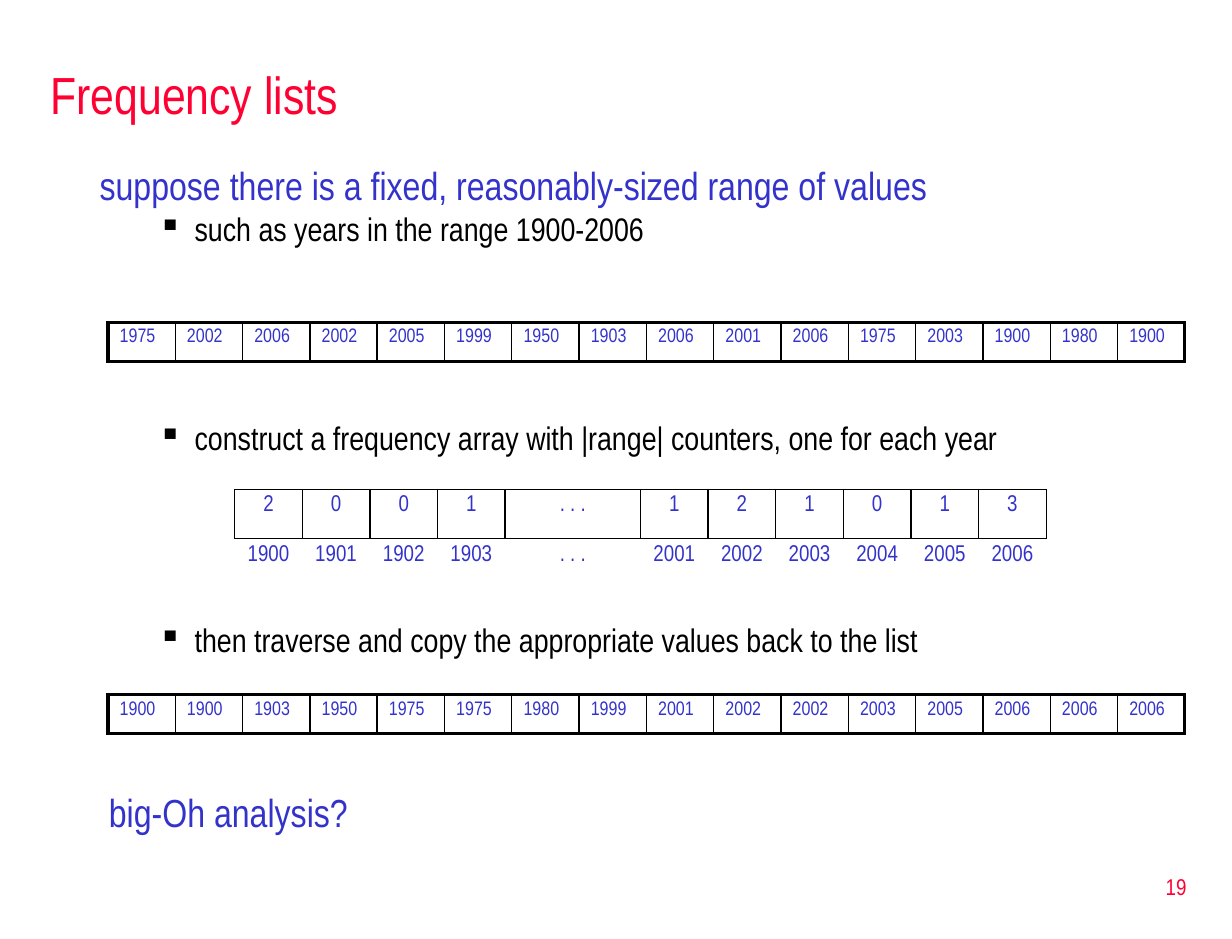
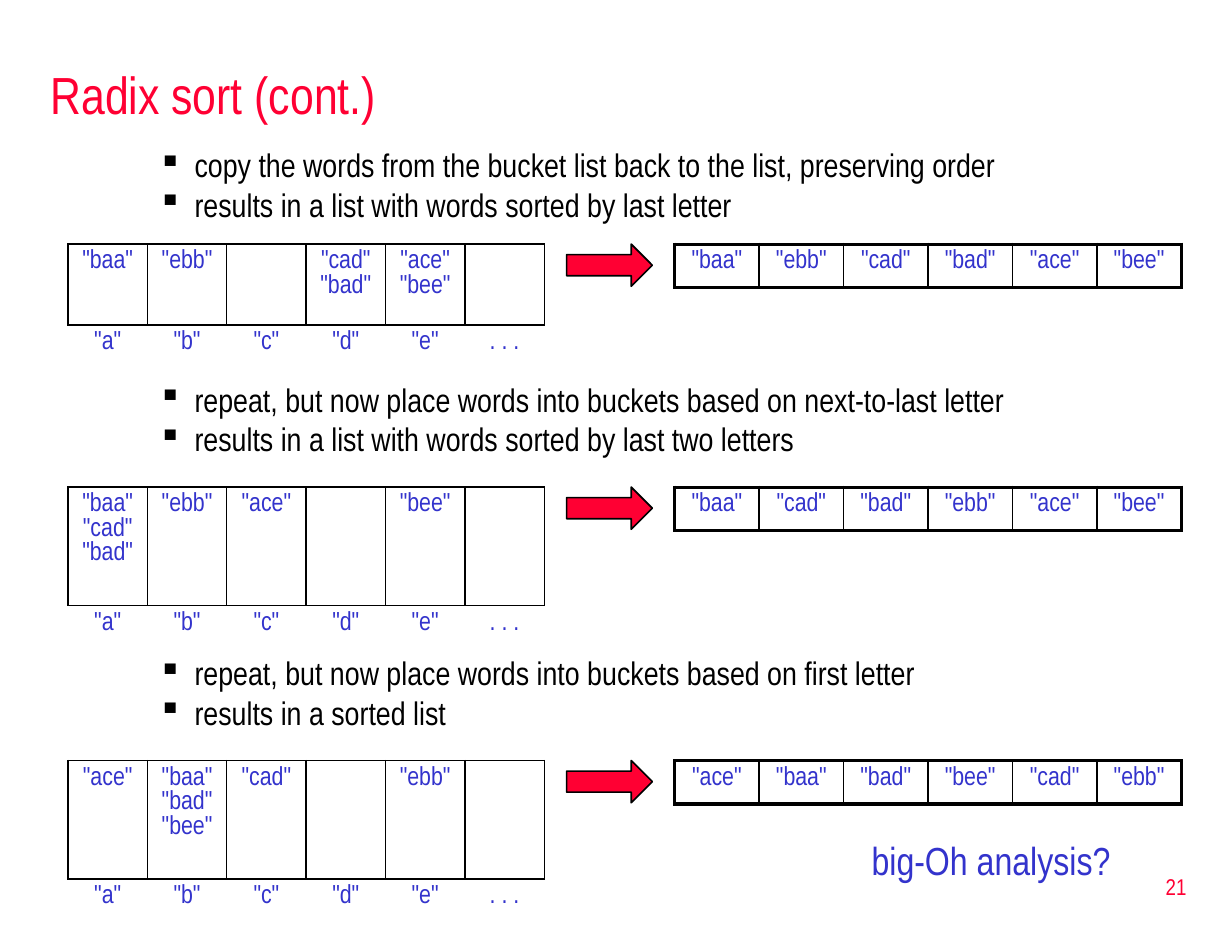
from dataclasses import dataclass

from lxml import etree
from pptx import Presentation
from pptx.dml.color import RGBColor
from pptx.enum.shapes import MSO_SHAPE
from pptx.enum.text import MSO_ANCHOR, MSO_AUTO_SIZE, PP_ALIGN as ALIGN
from pptx.oxml.ns import qn
from pptx.util import Inches, Pt


@dataclass(frozen=True)
class Theme:
    font: str = "Arial Narrow"
    red: str = "FF0033"
    blue: str = "3333CC"
    black: str = "000000"
    title: int = 32
    heading: int = 24
    bullet: int = 20
    word: int = 16
    small: int = 14
    year: int = 12
    thin: float = 1
    thick: float = 2.25


THEME = Theme()
COUNTS = ["2", "0", "0", "1", ". . .", "1", "2", "1", "0", "1", "3"]
COUNTED_YEARS = ["1900", "1901", "1902", "1903", ". . .",
                 "2001", "2002", "2003", "2004", "2005", "2006"]
YEARS = [1975, 2002, 2006, 2002, 2005, 1999, 1950, 1903,
         2006, 2001, 2006, 1975, 2003, 1900, 1980, 1900]
BUCKET_LABELS = ['"a"', '"b"', '"c"', '"d"', '"e"', ". . ."]

# Each pass: table top, bullets top, bucket height, bullets, buckets, resulting list
PASSES = [
    (2.08, 1.25, 0.69,
     ["copy the words from the bucket list back to the list, preserving order",
      "results in a list with words sorted by last letter"],
     ["baa", "ebb", "", "cad bad", "ace bee", ""],
     "baa ebb cad bad ace bee"),
    (4.15, 3.25, 1.01,
     ["repeat, but now place words into buckets based on next-to-last letter",
      "results in a list with words sorted by last two letters"],
     ["baa cad bad", "ebb", "ace", "", "bee", ""],
     "baa cad bad ebb ace bee"),
    (6.48, 5.58, 1.01,
     ["repeat, but now place words into buckets based on first letter",
      "results in a sorted list"],
     ["ace", "baa bad bee", "cad", "", "ebb", ""],
     "ace baa bad bee cad ebb"),
]


def quoted(words):
    return [f'"{word}"' for word in words.split()]


def style(para, size, color, align=ALIGN.LEFT):
    para.alignment = align
    para.font.name = THEME.font
    para.font.size = Pt(size)
    para.font.color.rgb = RGBColor.from_string(color)


def add_title_slide(deck, title, number):
    page = deck.slides.add_slide(deck.slide_layouts[5])
    box = page.shapes.title
    box.left, box.top = Inches(0.33), Inches(0.42)
    box.width, box.height = Inches(9.92), Inches(0.75)
    frame = box.text_frame
    frame.text = title
    frame.auto_size = MSO_AUTO_SIZE.NONE
    frame.vertical_anchor = MSO_ANCHOR.MIDDLE
    style(frame.paragraphs[0], THEME.title, THEME.red)

    frame = add_frame(page, 8.02, 7.29, 2.19, 0.53)
    frame.vertical_anchor = MSO_ANCHOR.MIDDLE
    frame.text = str(number)
    style(frame.paragraphs[0], THEME.small, THEME.red, ALIGN.RIGHT)
    return page


def add_frame(page, left, top, width, height):
    box = page.shapes.add_textbox(Inches(left), Inches(top), Inches(width), Inches(height))
    box.text_frame.word_wrap = True
    return box.text_frame


def add_heading(page, left, top, width, text):
    frame = add_frame(page, left, top, width, 0.5)
    frame.text = text
    para = frame.paragraphs[0]
    para.space_before = Pt(5)
    style(para, THEME.heading, THEME.blue)
    return frame


def format_bullet(para, gap=5):
    para.level = 1
    para.line_spacing = 0.8
    para.space_before = Pt(gap)
    style(para, THEME.bullet, THEME.black)
    properties = para._p.get_or_add_pPr()
    properties.set("marL", str(Inches(0.81)))
    properties.set("indent", str(Inches(-0.31)))
    bullet = etree.Element(qn("a:buChar"), char="▪")
    properties.find(qn("a:defRPr")).addprevious(bullet)


def add_bullets(page, top, height, lines, gap=5):
    """Add a bullet list; gap is the space in points above each later line."""
    frame = add_frame(page, 0.75, top, 9.25, height)
    frame.text = "\n".join(lines)
    for index, para in enumerate(frame.paragraphs):
        format_bullet(para, gap if index else 5)


def set_borders(cell, **widths):
    """Draw the sides named L, R, T and B in points; the others stay bare."""
    properties = cell._tc.get_or_add_tcPr()
    for side in "LRTB":
        line = etree.SubElement(properties, qn(f"a:ln{side}"))
        if side in widths:
            line.set("w", str(Pt(widths[side])))
            fill = etree.SubElement(line, qn("a:solidFill"))
            etree.SubElement(fill, qn("a:srgbClr"), val=THEME.black)
        else:
            line.set("w", "0")
            etree.SubElement(line, qn("a:noFill"))
    cell.fill.background()


def add_grid(page, left, top, widths, heights):
    shape = page.shapes.add_table(len(heights), len(widths), Inches(left), Inches(top),
                                  Inches(sum(widths)), Inches(sum(heights)))
    table = shape.table
    table.first_row = table.horz_banding = False
    for column, width in zip(table.columns, widths):
        column.width = Inches(width)
    for row, height in zip(table.rows, heights):
        row.height = Inches(height)
    return table


def fill_cell(cell, text, size, align):
    cell.text = text
    for para in cell.text_frame.paragraphs:
        style(para, size, THEME.blue, align)


def add_list(page, left, top, width, height, items, size, align):
    """Add a one-row list with a thick frame and thin dividers."""
    count = len(items)
    table = add_grid(page, left, top, [width / count] * count, [height])
    for index, item in enumerate(items):
        cell = table.cell(0, index)
        fill_cell(cell, str(item), size, align)
        set_borders(cell, T=THEME.thick, B=THEME.thick,
                    L=THEME.thin if index else THEME.thick,
                    R=THEME.thin if index < count - 1 else THEME.thick)


def add_labelled_cells(page, left, top, widths, heights, items, labels, size):
    """Add a row of boxed cells with an unboxed row of labels below."""
    table = add_grid(page, left, top, widths, heights)
    thin = THEME.thin
    for index, (item, label) in enumerate(zip(items, labels)):
        boxed, below = table.cell(0, index), table.cell(1, index)
        fill_cell(boxed, item, size, ALIGN.CENTER)
        fill_cell(below, label, size, ALIGN.CENTER)
        set_borders(boxed, L=thin, R=thin, T=thin, B=thin)
        set_borders(below, T=thin)


def add_arrow(page, top):
    arrow = page.shapes.add_shape(MSO_SHAPE.RIGHT_ARROW, Inches(4.83), Inches(top),
                                  Inches(0.73), Inches(0.36))
    arrow.shadow.inherit = False
    arrow.fill.solid()
    arrow.fill.fore_color.rgb = RGBColor.from_string(THEME.red)
    arrow.line.color.rgb = RGBColor.from_string(THEME.black)
    arrow.line.width = Pt(THEME.thin)


def add_frequency_slide(deck):
    page = add_title_slide(deck, "Frequency lists", 19)
    frame = add_heading(page, 0.75, 1.33, 9.25,
                        "suppose there is a fixed, reasonably-sized range of values")
    para = frame.add_paragraph()
    para.text = "such as years in the range 1900-2006"
    format_bullet(para)

    add_bullets(page, 3.58, 2,
                ["construct a frequency array with |range| counters, one for each year",
                 "then traverse and copy the appropriate values back to the list"], gap=104.5)
    for top, years in ((2.75, YEARS), (5.92, sorted(YEARS))):
        add_list(page, 0.92, top, 9.18, 0.33, years, THEME.year, ALIGN.LEFT)

    unit = 6.92 / 12
    widths = [2 * unit if count == ". . ." else unit for count in COUNTS]
    add_labelled_cells(page, 2, 4.17, widths, [0.42, 0.42], COUNTS, COUNTED_YEARS, THEME.small)
    add_heading(page, 0.83, 6.67, 2.5, "big-Oh analysis?")


def add_radix_slide(deck):
    page = add_title_slide(deck, "Radix sort (cont.)", 21)
    for top, bullets_top, bucket_height, lines, buckets, result in PASSES:
        add_bullets(page, bullets_top, 0.75, lines)
        add_labelled_cells(page, 0.58, top, [4.06 / 6] * 6, [bucket_height, 0.67],
                           ["\n".join(quoted(bucket)) for bucket in buckets],
                           BUCKET_LABELS, THEME.word)
        add_arrow(page, top)
        add_list(page, 5.75, top, 4.32, 0.37, quoted(result), THEME.word, ALIGN.CENTER)
    add_heading(page, 7.33, 7.08, 2.33, "big-Oh analysis?")


def main():
    deck = Presentation()
    deck.slide_width, deck.slide_height = Inches(10.5), Inches(8)
    add_frequency_slide(deck)
    add_radix_slide(deck)
    deck.save("out.pptx")


if __name__ == "__main__":
    main()
